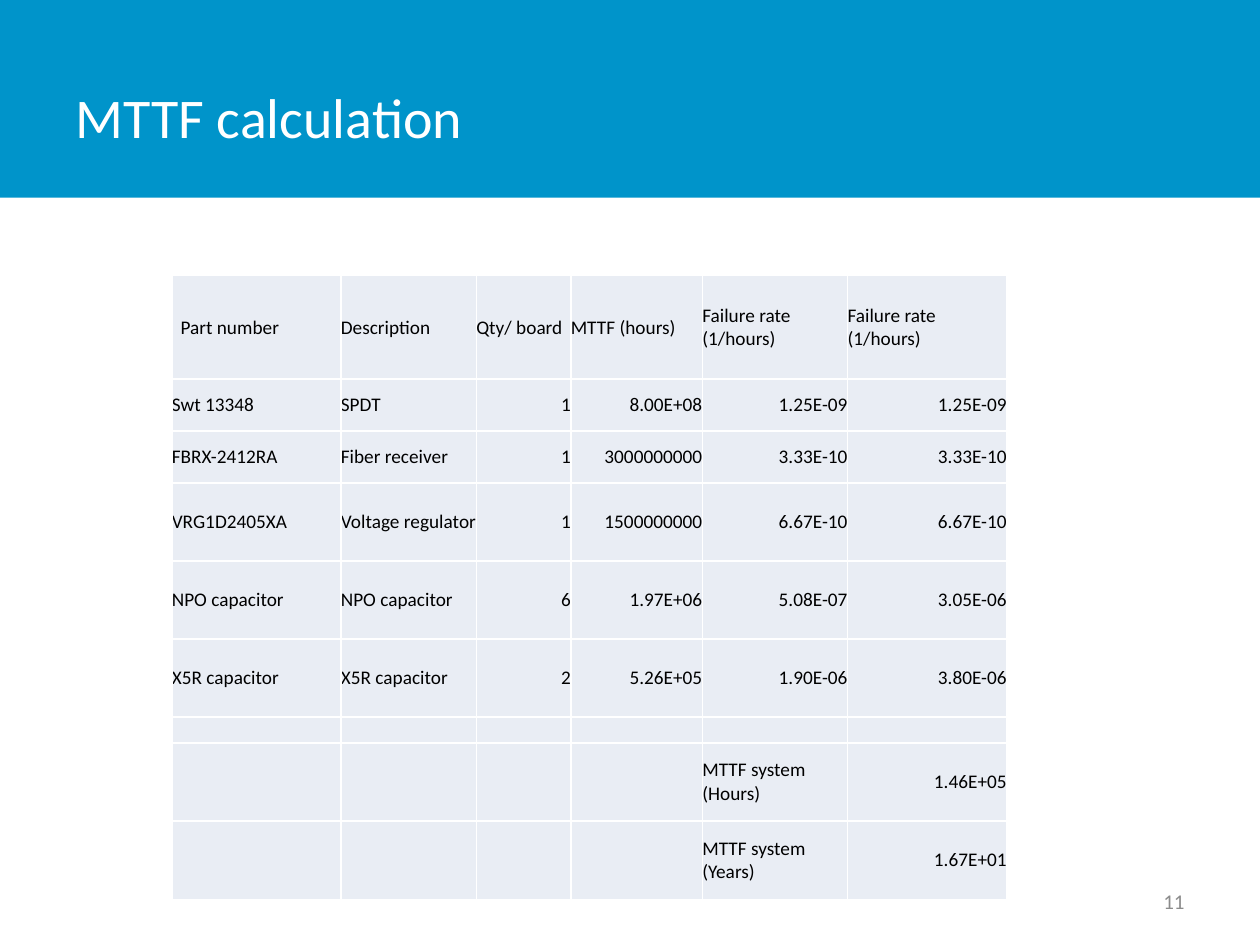
"""Build the MTTF calculation slide."""
from lxml import etree
from pptx import Presentation
from pptx.dml.color import RGBColor
from pptx.enum import shapes, text
from pptx.oxml import ns
from pptx.util import Pt

COLORS = {"band": "0094CA", "cell": "E9EDF4", "white": "FFFFFF", "black": "000000", "gray": "8C8C8C"}
FONT = "Calibri"
CELL_SIZE = 11
COLUMN_WIDTHS = [96.6, 77.4, 54, 75.2, 83, 91]
ROW_HEIGHTS = [59.2, 29.7, 29.7, 44.6, 44.6, 44.6, 14.9, 44.6, 44.6]
ROWS = [
    ["Part number", "Description", "Qty/ board", "MTTF (hours)", "Failure rate (1/hours)", "Failure rate (1/hours)"],
    ["Swt 13348", "SPDT", "1", "8.00E+08", "1.25E-09", "1.25E-09"],
    ["FBRX-2412RA", "Fiber receiver", "1", "3000000000", "3.33E-10", "3.33E-10"],
    ["VRG1D2405XA", "Voltage regulator", "1", "1500000000", "6.67E-10", "6.67E-10"],
    ["NPO capacitor", "NPO capacitor", "6", "1.97E+06", "5.08E-07", "3.05E-06"],
    ["X5R capacitor", "X5R capacitor", "2", "5.26E+05", "1.90E-06", "3.80E-06"],
    [""] * 6,
    [""] * 4 + ["MTTF system (Hours)", "1.46E+05"],
    [""] * 4 + ["MTTF system (Years)", "1.67E+01"],
]


def style_text(paragraph, size, color, align=text.PP_ALIGN.LEFT):
    paragraph.alignment = align
    for run in paragraph.runs:
        run.font.name = FONT
        run.font.size = Pt(size)
        run.font.color.rgb = RGBColor.from_string(COLORS[color])


def add_border(cell, side):
    line = etree.SubElement(cell._tc.get_or_add_tcPr(), ns.qn(f"a:{side}"), w=str(Pt(1)))
    fill = etree.SubElement(line, ns.qn("a:solidFill"))
    etree.SubElement(fill, ns.qn("a:srgbClr"), val=COLORS["white"])


presentation = Presentation()
presentation.slide_width, presentation.slide_height = Pt(720), Pt(540)
slide = presentation.slides.add_slide(presentation.slide_layouts[6])

band = slide.shapes.add_shape(shapes.MSO_SHAPE.RECTANGLE, 0, 0, Pt(720), Pt(113))
band.shadow.inherit = False
band.fill.solid()
band.fill.fore_color.rgb = RGBColor.from_string(COLORS["band"])
band.line.fill.background()

for label, box, size, color, align in [
    ("MTTF calculation", (36, 21.6, 562.3, 90), 32, "white", text.PP_ALIGN.LEFT),
    ("11", (516, 500.5, 168, 28.8), 12, "gray", text.PP_ALIGN.RIGHT),
]:
    frame = slide.shapes.add_textbox(*map(Pt, box)).text_frame
    frame.word_wrap = True
    frame.vertical_anchor = text.MSO_ANCHOR.MIDDLE
    frame.text = label
    style_text(frame.paragraphs[0], size, color, align)

table = slide.shapes.add_table(
    len(ROWS), len(COLUMN_WIDTHS), Pt(98.2), Pt(157.5), Pt(sum(COLUMN_WIDTHS)), Pt(sum(ROW_HEIGHTS))
).table
table.first_row = table.horz_banding = False
for column, width in zip(table.columns, COLUMN_WIDTHS):
    column.width = Pt(width)
for row, height, values in zip(table.rows, ROW_HEIGHTS, ROWS):
    row.height = Pt(height)
    for cell, value in zip(row.cells, values):
        cell.margin_left = cell.margin_right = cell.margin_top = cell.margin_bottom = 0
        cell.vertical_anchor = text.MSO_ANCHOR.MIDDLE
        for side in ("lnL", "lnR", "lnT", "lnB"):
            add_border(cell, side)
        cell.fill.solid()
        cell.fill.fore_color.rgb = RGBColor.from_string(COLORS["cell"])
        cell.text = value
        paragraph = cell.text_frame.paragraphs[0]
        align = text.PP_ALIGN.RIGHT if value[:1].isdigit() else text.PP_ALIGN.LEFT
        style_text(paragraph, CELL_SIZE, "black", align)
        if not value:
            etree.SubElement(paragraph._p, ns.qn("a:endParaRPr"), sz=str(CELL_SIZE * 100))
table.cell(0, 0).margin_left = Pt(5)

presentation.save("out.pptx")
